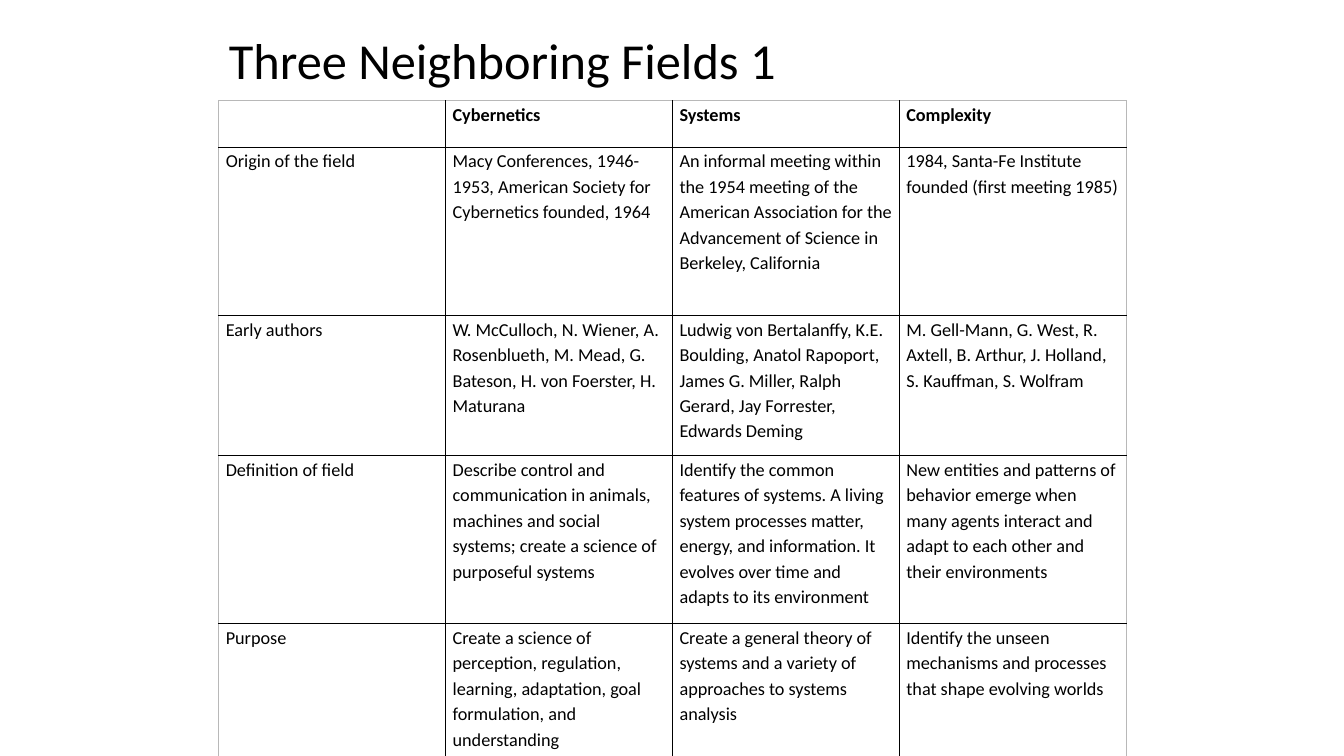
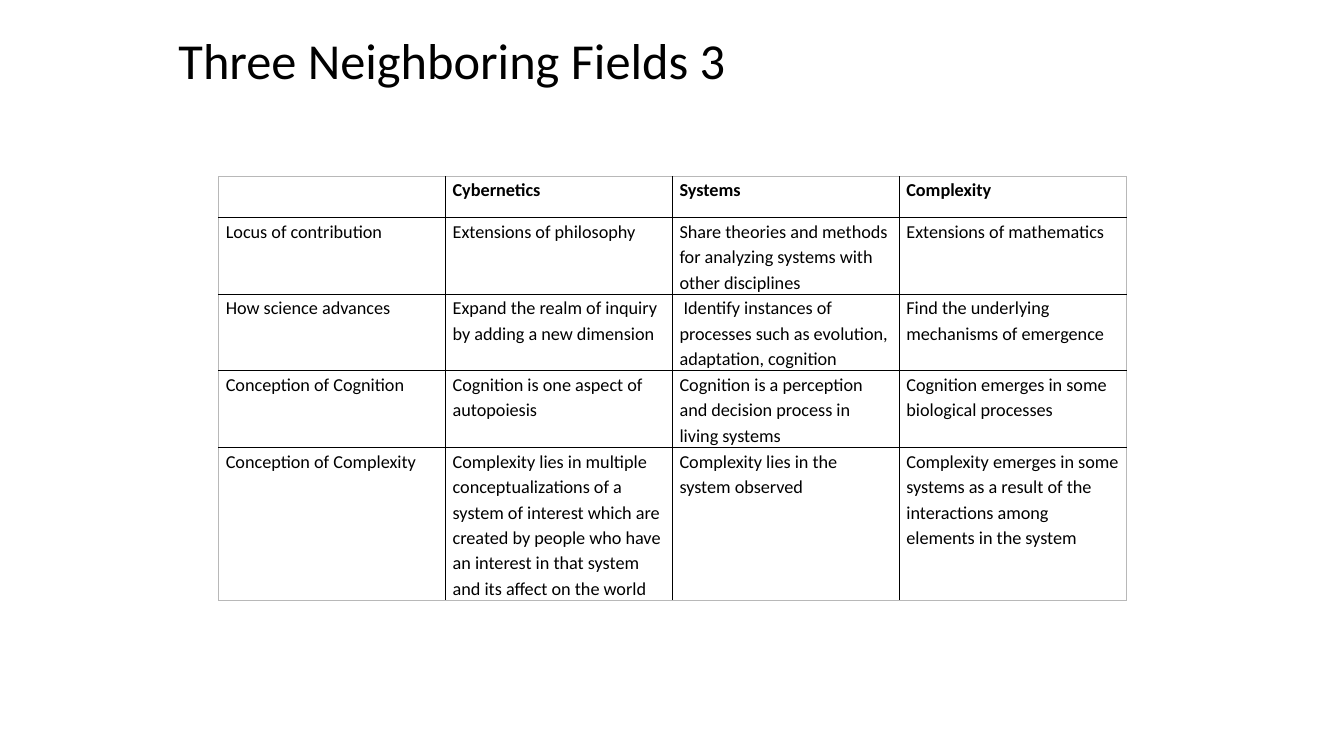
from dataclasses import dataclass

from lxml.etree import SubElement as Sub
from pptx import Presentation
from pptx.dml.color import RGBColor as Rgb
from pptx.enum.text import MSO_ANCHOR as Anchor, PP_ALIGN as Align
from pptx.oxml.ns import qn
from pptx.util import Inches, Pt

FONT = "Calibri"
BLACK, GREY = "000000", "B8B8B8"
HEADS = ("", "Cybernetics", "Systems", "Complexity")
LEFT, COL = 2.17, 2.25
LOOSE = (10, 10, 0, 10)  # points after the text, by column
TIGHT = (0, 0, 0, 0)
PAD = {
    "margin_left": Inches(0.07),
    "margin_right": Inches(0.07),
    "margin_top": 0,
    "margin_bottom": 0,
}
PLAIN = {"first_row": False, "horz_banding": False}


@dataclass
class Row:
    high: float
    texts: tuple[str, ...]
    gaps: tuple[int, ...] = LOOSE


@dataclass
class Page:
    title: str
    left: float
    width: float
    top: float
    rows: list[Row]


PAGES = [
    Page("Three Neighboring Fields 1", 2.17, 9, 1, [
        Row(0.46, HEADS),
        Row(1.67, (
            "Origin of the field",
            "Macy Conferences, 1946-1953, American Society for Cybernetics "
            "founded, 1964",
            "An informal meeting within the 1954 meeting of the American "
            "Association for the Advancement of Science in Berkeley, California",
            "1984, Santa-Fe Institute founded (first meeting 1985)",
        )),
        Row(1.39, (
            "Early authors",
            "W. McCulloch, N. Wiener, A. Rosenblueth, M. Mead, G. Bateson, "
            "H. von Foerster, H. Maturana",
            "Ludwig von Bertalanffy, K.E. Boulding, Anatol Rapoport, "
            "James G. Miller, Ralph Gerard, Jay Forrester, Edwards Deming",
            "M. Gell-Mann, G. West, R. Axtell, B. Arthur, J. Holland, "
            "S. Kauffman, S. Wolfram",
        )),
        Row(1.67, (
            "Definition of field",
            "Describe control and communication in animals, machines and "
            "social systems; create a science of purposeful systems",
            "Identify the common features of systems. A living system "
            "processes matter, energy, and information. It evolves over time "
            "and adapts to its environment",
            "New entities and patterns of behavior emerge when many agents "
            "interact and adapt to each other and their environments",
        )),
        Row(1.31, (
            "Purpose",
            "Create a science of perception, regulation, learning, "
            "adaptation, goal formulation, and understanding",
            "Create a general theory of systems and a variety of approaches "
            "to systems analysis",
            "Identify the unseen mechanisms and processes that shape "
            "evolving worlds",
        )),
    ]),
    Page("Three Neighboring Fields 3", 1.67, 10, 1.75, [
        Row(0.41, HEADS),
        Row(0.76, (
            "Locus of contribution",
            "Extensions of philosophy",
            "Share theories and methods for analyzing systems with other "
            "disciplines",
            "Extensions of mathematics",
        )),
        Row(0.76, (
            "How science advances",
            "Expand the realm of inquiry by adding a new dimension",
            " Identify instances of processes such as evolution, "
            "adaptation, cognition",
            "Find the underlying mechanisms of emergence",
        )),
        Row(0.76, (
            "Conception of Cognition",
            "Cognition is one aspect of autopoiesis",
            "Cognition is a perception and decision process in living systems",
            "Cognition emerges in some biological processes",
        ), TIGHT),
        Row(1.52, (
            "Conception of Complexity",
            "Complexity lies in multiple conceptualizations of a system of "
            "interest which are created by people who have an interest in "
            "that system and its affect on the world",
            "Complexity lies in the system observed",
            "Complexity emerges in some systems as a result of the "
            "interactions among elements in the system",
        ), TIGHT),
    ]),
]


def apply(item, form: dict) -> None:
    for key, value in form.items():
        setattr(item, key, value)


def paint(font, color: str) -> None:
    font.color.rgb = Rgb.from_string(color)


def write(para, text: str, size: float, form: dict, bold: bool = False) -> None:
    apply(para, {"alignment": Align.LEFT, **form})
    if text:
        run = para.add_run()
        run.text = text
        apply(run.font, {"name": FONT, "size": Pt(size), "bold": bold})
        paint(run.font, BLACK)


def edge(cell, side: str, outer: bool) -> None:
    width = Pt(0.5 if outer else 1)
    line = Sub(cell._tc.get_or_add_tcPr(), qn(f"a:ln{side}"), w=str(width))
    fill = Sub(line, qn("a:solidFill"))
    Sub(fill, qn("a:srgbClr"), val=GREY if outer else BLACK)


def add_title(slide, page: Page) -> None:
    title = slide.shapes.title
    apply(title, {
        "left": Inches(page.left), "top": 0,
        "width": Inches(page.width), "height": Inches(1.25),
    })
    apply(title.text_frame,
          {"vertical_anchor": Anchor.MIDDLE, "word_wrap": True})
    write(title.text_frame.paragraphs[0], page.title, 36,
          {"line_spacing": 0.9})


def add_grid(slide, page: Page) -> None:
    rows, cols = len(page.rows), len(HEADS)
    high = sum(row.high for row in page.rows)
    grid = slide.shapes.add_table(
        rows, cols, Inches(LEFT), Inches(page.top),
        Inches(COL * cols), Inches(high)).table
    apply(grid, PLAIN)
    for y, row in enumerate(page.rows):
        grid.rows[y].height = Inches(row.high)
        for x, (text, gap) in enumerate(zip(row.texts, row.gaps)):
            cell = grid.cell(y, x)
            apply(cell, PAD)
            # Outer edges are pale, inner rules black
            rims = {"L": x == 0, "R": x == cols - 1,
                    "T": y == 0, "B": y == rows - 1}
            for side, outer in rims.items():
                edge(cell, side, outer)
            cell.fill.background()
            write(cell.text_frame.paragraphs[0], text, 13,
                  {"line_spacing": 1.15, "space_after": Pt(gap)}, y == 0)


def main() -> None:
    deck = Presentation()
    apply(deck, {"slide_width": Inches(13.33), "slide_height": Inches(7.5)})
    for page in PAGES:
        slide = deck.slides.add_slide(deck.slide_layouts[5])
        add_title(slide, page)
        add_grid(slide, page)
    deck.save("out.pptx")


if __name__ == "__main__":
    main()
